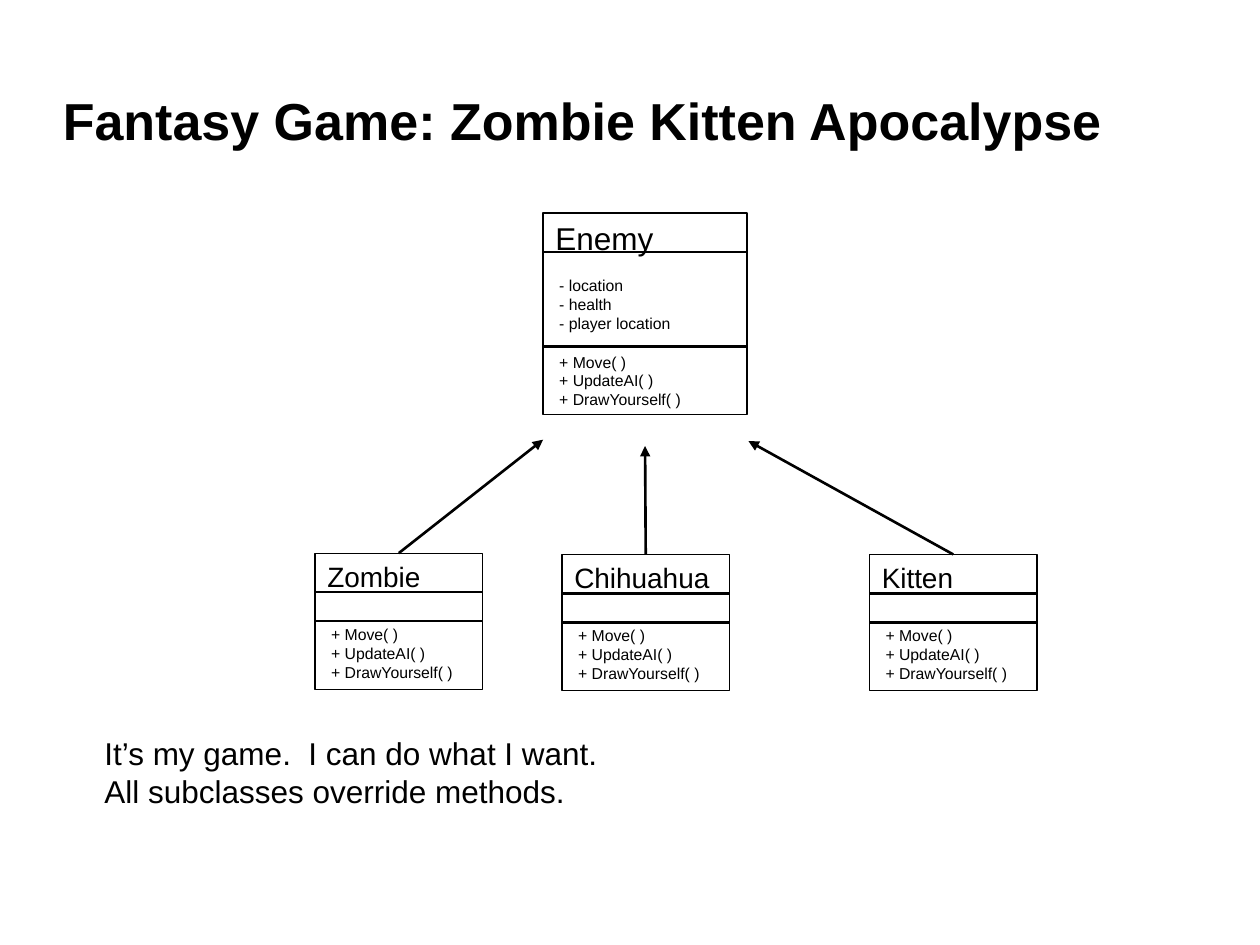
from pptx import Presentation
from pptx import util as u
from pptx.dml.color import RGBColor
from pptx.enum import shapes, text
from pptx.oxml.ns import qn
from lxml import etree

INK = "000000"
NAME_ROW, FIELD_ROW = 0.31, 0.23
METHODS = ["+ Move( )", "+ UpdateAI( )", "+ DrawYourself( )"]


def color(value):
    """Turn a hex string into a colour."""
    return RGBColor.from_string(value)


def add_para(frame, words, size, bold=False, before=0, indent=0, spacing=None):
    """Write one formatted paragraph into a text frame."""
    para = frame.paragraphs[0]
    if para.runs:
        para = frame.add_paragraph()
    if indent:
        para._p.get_or_add_pPr().set("marL", str(u.Inches(indent)))
    para.alignment = text.PP_ALIGN.LEFT
    para.space_before = u.Pt(before)
    para.line_spacing = spacing
    span = para.add_run()
    span.text = words
    span.font.name = "Arial"
    span.font.size = u.Pt(size)
    span.font.bold = bold
    span.font.color.rgb = color(INK)


def add_line(page, start, end, width, arrow=False):
    """Draw a straight line, with an arrowhead at its end if asked."""
    line = page.shapes.add_connector(
        shapes.MSO_CONNECTOR.STRAIGHT, *(u.Inches(v) for v in (*start, *end)))
    line.line.color.rgb = color(INK)
    line.line.width = u.Pt(width)
    props = line._element.spPr
    if arrow:
        etree.SubElement(props.find(qn("a:ln")), qn("a:tailEnd"), type="triangle")
    etree.SubElement(props, qn("a:effectLst"))
    return line


def add_text(page, area, lines, anchor=text.MSO_ANCHOR.TOP, **style):
    """Place a wrapped text box holding the given lines."""
    box = page.shapes.add_textbox(*(u.Inches(v) for v in area))
    box.text_frame.word_wrap = True
    box.text_frame.vertical_anchor = anchor
    for words in lines:
        add_para(box.text_frame, words, **style)


def add_class(page, area, name, size, rows, groups, gap):
    """Draw a class box with its name, dividers and member groups."""
    left, top, width, height = area
    box = page.shapes.add_shape(
        shapes.MSO_SHAPE.RECTANGLE, *(u.Inches(v) for v in area))
    box.shadow.inherit = False
    box.fill.background()
    box.line.color.rgb = color(INK)
    box.line.width = u.Pt(0.75)
    frame = box.text_frame
    frame.word_wrap = True
    frame.vertical_anchor = text.MSO_ANCHOR.TOP
    add_para(frame, name, size)
    for members in groups:
        for index, member in enumerate(members):
            add_para(frame, member, 9, before=0 if index else gap, indent=0.03)
    y = top
    for row in rows:
        y += row
        add_line(page, (left, y), (left + width, y), 1.25)
    return box


def add_hierarchy(page):
    """Draw the base class and the subclasses that point to it."""
    fields = ["- location", "- health", "- player location"]
    add_class(page, (4.31, 1.69, 1.62, 1.6), "Enemy", 18,
              (NAME_ROW, 0.75), (fields, METHODS), 11)
    subclasses = [("Zombie", 2.5, 4.39, (4.31, 3.49)),
                  ("Chihuahua", 4.46, 4.4, (5.12, 3.54)),
                  ("Kitten", 6.9, 4.4, (5.94, 3.5))]
    width, height = 1.33, 1.08
    for name, left, top, target in subclasses:
        box = add_class(page, (left, top, width, height), name, 16,
                        (NAME_ROW, FIELD_ROW), (METHODS,), 18)
        arrow = add_line(page, (left + width / 2, top), target, 1.5, arrow=True)
        arrow.begin_connect(box, 0)


def main():
    """Build the slide and save the deck."""
    deck = Presentation()
    deck.slide_width, deck.slide_height = u.Inches(10), u.Inches(7.5)
    page = deck.slides.add_slide(deck.slide_layouts[6])
    add_text(page, (0.4, 0.56, 9.21, 0.84),
             ["Fantasy Game: Zombie Kitten Apocalypse"],
             anchor=text.MSO_ANCHOR.MIDDLE, size=29.7, bold=True, spacing=0.9)
    add_hierarchy(page)
    add_text(page, (0.73, 5.78, 4.15, 0.71),
             ["It’s my game.  I can do what I want.",
              "All subclasses override methods."], size=18)
    deck.save("out.pptx")


if __name__ == "__main__":
    main()
